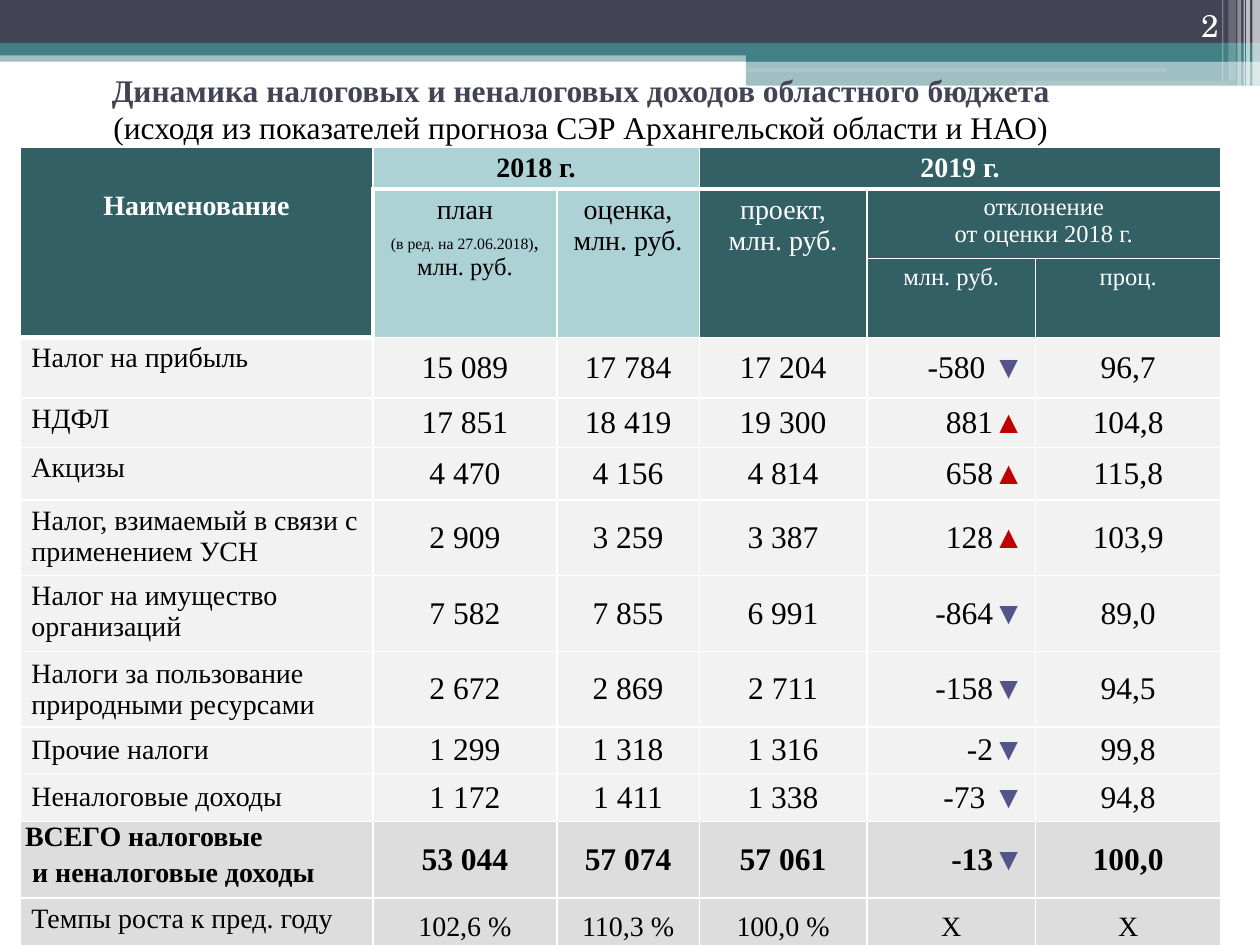
from lxml import etree
from pptx import Presentation
from pptx.dml.color import RGBColor
from pptx.enum import shapes, text
from pptx.oxml import ns
from pptx.util import Inches, Pt

HUES = {
    "navy": "424456", "teal": "438086", "deep": "326065", "pale": "ADD2D6",
    "row": "F2F2F2", "total": "DDDDDD", "white": "FFFFFF", "black": "000000",
    "up": "C00000", "down": "53548A",
}
MARKS = {"▲": "up", "▼": "down"}
LEFT, MID, RIGHT = text.PP_ALIGN.LEFT, text.PP_ALIGN.CENTER, text.PP_ALIGN.RIGHT
TOP, CORE, LOW = text.MSO_ANCHOR.TOP, text.MSO_ANCHOR.MIDDLE, text.MSO_ANCHOR.BOTTOM
RECT, ROUND = shapes.MSO_SHAPE.RECTANGLE, shapes.MSO_SHAPE.ROUNDED_RECTANGLE


class Deck:
    face = "Times New Roman"

    def __init__(self, slide):
        self.slide = slide

    def run(self, para, words, size, hue="black", bold=False, face=None):
        run = para.add_run()
        run.text = words
        look = {"name": face or self.face, "size": Pt(size), "bold": bold}
        for key, value in look.items():
            setattr(run.font, key, value)
        run.font.color.rgb = RGBColor.from_string(HUES[hue])

    def band(self, x, y, w, h, hue, alpha=100, kind=RECT):
        box = self.slide.shapes.add_shape(kind, *map(Inches, (x, y, w, h)))
        box.shadow.inherit = False
        box.line.fill.background()
        box.fill.solid()
        box.fill.fore_color.rgb = RGBColor.from_string(HUES[hue])
        if alpha < 100:
            tint = next(box.element.iter(ns.qn("a:srgbClr")))
            etree.SubElement(tint, ns.qn("a:alpha"), val=str(alpha * 1000))

    def title(self, lines, x, y, w, h):
        box = self.slide.shapes.title
        place = {"left": x, "top": y, "width": w, "height": h}
        for key, value in place.items():
            setattr(box, key, Inches(value))
        frame = box.text_frame
        frame.auto_size = text.MSO_AUTO_SIZE.NONE
        frame.vertical_anchor = CORE
        para = frame.paragraphs[0]
        para.alignment = MID
        for i, line in enumerate(lines):
            if i:
                para.add_line_break()
            self.run(para, *line)
        # Bring the title in front of the bands
        box.element.getparent().append(box.element)

    def label(self, words, x, y, w, h, size, hue, face):
        box = self.slide.shapes.add_textbox(*map(Inches, (x, y, w, h)))
        frame = box.text_frame
        frame.word_wrap = True
        frame.vertical_anchor = LOW
        para = frame.paragraphs[0]
        para.alignment = RIGHT
        self.run(para, words, size, hue, face=face)

    def table(self, x, y, cols, rows):
        grid = self.slide.shapes.add_table(
            len(rows), len(cols), *map(Inches, (x, y, sum(cols), sum(rows)))).table
        for col, size in zip(grid.columns, cols):
            col.width = Inches(size)
        for row, size in zip(grid.rows, rows):
            row.height = Inches(size)
        return grid

    def edge(self, cell, wide):
        for side in "LRTB":
            line = etree.SubElement(
                cell._tc.get_or_add_tcPr(), ns.qn("a:ln" + side),
                w=str(Pt(3 if side in wide else 1)))
            fill = etree.SubElement(line, ns.qn("a:solidFill"))
            etree.SubElement(fill, ns.qn("a:srgbClr"), val=HUES["white"])

    def cell(self, cell, paras, fill, align=MID, anchor=CORE, wide="", gap=3, pad=None):
        self.edge(cell, wide)
        cell.fill.solid()
        cell.fill.fore_color.rgb = RGBColor.from_string(HUES[fill])
        cell.vertical_anchor = anchor
        sides = ("left", "top", "right", "bottom")
        for side, size in zip(sides, pad or (0.09, 0.04, 0.09, 0.04)):
            setattr(cell, "margin_" + side, Inches(size))
        frame = cell.text_frame
        for i, runs in enumerate(paras):
            para = frame.add_paragraph() if i else frame.paragraphs[0]
            para.alignment = align
            para.space_before = Pt(gap)
            for item in runs:
                self.run(para, *item)


# Bands: x, y, width, height, hue, opacity, kind
BANDS = [
    (0, 0.4, 10, 0.09, "teal", 50), (0, 0, 10, 0.34, "navy"),
    (0, 0.34, 10, 0.1, "teal"), (5.92, 0.39, 4.08, 0.1, "teal"),
    (5.92, 0.48, 4.08, 0.2, "teal", 50),
    (5.91, 0.54, 3.35, 0.03, "white", 11, ROUND),
    (8.06, 0.64, 1.75, 0.04, "white", 11, ROUND),
]
# Stripes: x, width, height, opacity
STRIPES = [
    (9.94, 0.06, 0.68, 65), (9.89, 0.03, 0.68, 65), (9.87, 0.01, 0.68, 60),
    (9.82, 0.03, 0.68, 40), (9.75, 0.06, 0.64, 20), (9.7, 0.01, 0.64, 30),
]
COLS = [2.8, 1.46, 1.13, 1.33, 1.34, 1.47]
ROWS = [0.33, 0.55, 0.63, 0.48, 0.39, 0.42, 0.6, 0.6, 0.6, 0.37, 0.38, 0.61, 0.46]
SPANS = [(0, 0, 2, 0), (0, 1, 0, 2), (0, 3, 0, 5), (1, 1, 2, 1),
         (1, 2, 2, 2), (1, 3, 2, 3), (1, 4, 1, 5)]
# Heads: row, column, fill, paragraphs, options
HEADS = [
    (0, 0, "deep", [[("Наименование", 16, "white", True)]],
     {"wide": "B", "pad": (0.09, 0.34, 0.09, 0.04)}),
    (0, 1, "pale", [[("2018 г.", 16, "black", True)]], {"wide": "B"}),
    (0, 3, "deep", [[("2019 г.", 16, "white", True)]], {"wide": "B"}),
    (1, 1, "pale", [[("план", 16)], [("(в ред. на 27.06.2018)", 9), (", ", 12),
                                     ("млн. руб.", 14)]], {"wide": "LT"}),
    (1, 2, "pale", [[("оценка, млн. руб.", 16)]], {"wide": "T"}),
    (1, 3, "deep", [[("проект, млн. руб.", 16, "white")]], {"wide": "T"}),
    (1, 4, "deep", [[("отклонение", 14, "white")],
                    [("от оценки 2018 г.", 14, "white")]], {"wide": "T", "gap": 0}),
    (2, 4, "deep", [[("млн. руб.", 14, "white")]], {}),
    (2, 5, "deep", [[("проц.", 14, "white")]], {}),
]
TAXES = [
    ("Налог на прибыль", "15 089", "17 784", "17 204", "-580 ▼", "96,7"),
    ("НДФЛ", "17 851", "18 419", "19 300", "881▲", "104,8"),
    ("Акцизы", "4 470", "4 156", "4 814", "658▲", "115,8"),
    ("Налог, взимаемый в связи с применением УСН",
     "2 909", "3 259", "3 387", "128▲", "103,9"),
    ("Налог на имущество организаций", "7 582", "7 855", "6 991", "-864▼", "89,0"),
    ("Налоги за пользование природными ресурсами",
     "2 672", "2 869", "2 711", "-158▼", "94,5"),
    ("Прочие налоги", "1 299", "1 318", "1 316", "-2▼", "99,8"),
    ("Неналоговые доходы", "1 172", "1 411", "1 338", "-73 ▼", "94,8"),
    ("ВСЕГО налоговые\n и неналоговые доходы",
     "53 044", "57 074", "57 061", "-13▼", "100,0"),
    ("Темпы роста к пред. году", "102,6 %", "110,3 %", "100,0 %", "Х", "Х"),
]


def main():
    prs = Presentation()
    prs.slide_width, prs.slide_height = Inches(10), Inches(7.5)
    deck = Deck(prs.slides.add_slide(prs.slide_layouts[5]))

    # Top decoration, page number and title
    for band in BANDS:
        deck.band(*band)
    for x, w, h, alpha in STRIPES:
        deck.band(x, 0, w, h, "white", alpha)
    deck.label("2", 8.94, 0, 0.83, 0.4, 18, "white", "TeX Gyre Schola")
    deck.title([
        ("Динамика налоговых и неналоговых доходов областного бюджета", 18, "navy", True),
        ("(исходя из показателей прогноза СЭР Архангельской области и НАО)", 18),
    ], 0, 0.55, 9.22, 0.62)

    # Table head
    grid = deck.table(0.16, 1.17, COLS, ROWS)
    for top, left, end, last in SPANS:
        grid.cell(top, left).merge(grid.cell(end, last))
    for r, c, fill, paras, opts in HEADS:
        deck.cell(grid.cell(r, c), paras, fill, anchor=TOP, **opts)

    # Table body
    for i, (name, *values) in enumerate(TAXES):
        r = i + 3
        total, rate = i == 8, i == 9
        fill = "total" if total or rate else "row"
        deck.cell(grid.cell(r, 0), [[(line, 16, "black", total)] for line in name.split("\n")],
                  fill, LEFT, CORE if 5 <= i <= 7 else TOP, "" if i else "T",
                  pad=(0.04, 0, 0.04, 0) if total else None)
        for c, value in enumerate(values, 1):
            mark = value[-1]
            runs = [(value.rstrip("▲▼"), 16 if rate else 18, "black", total)]
            if mark in MARKS:
                runs.append((mark, 18, MARKS[mark]))
            deck.cell(grid.cell(r, c), [runs], fill, RIGHT if mark in MARKS else MID)
    prs.save("out.pptx")


if __name__ == "__main__":
    main()
